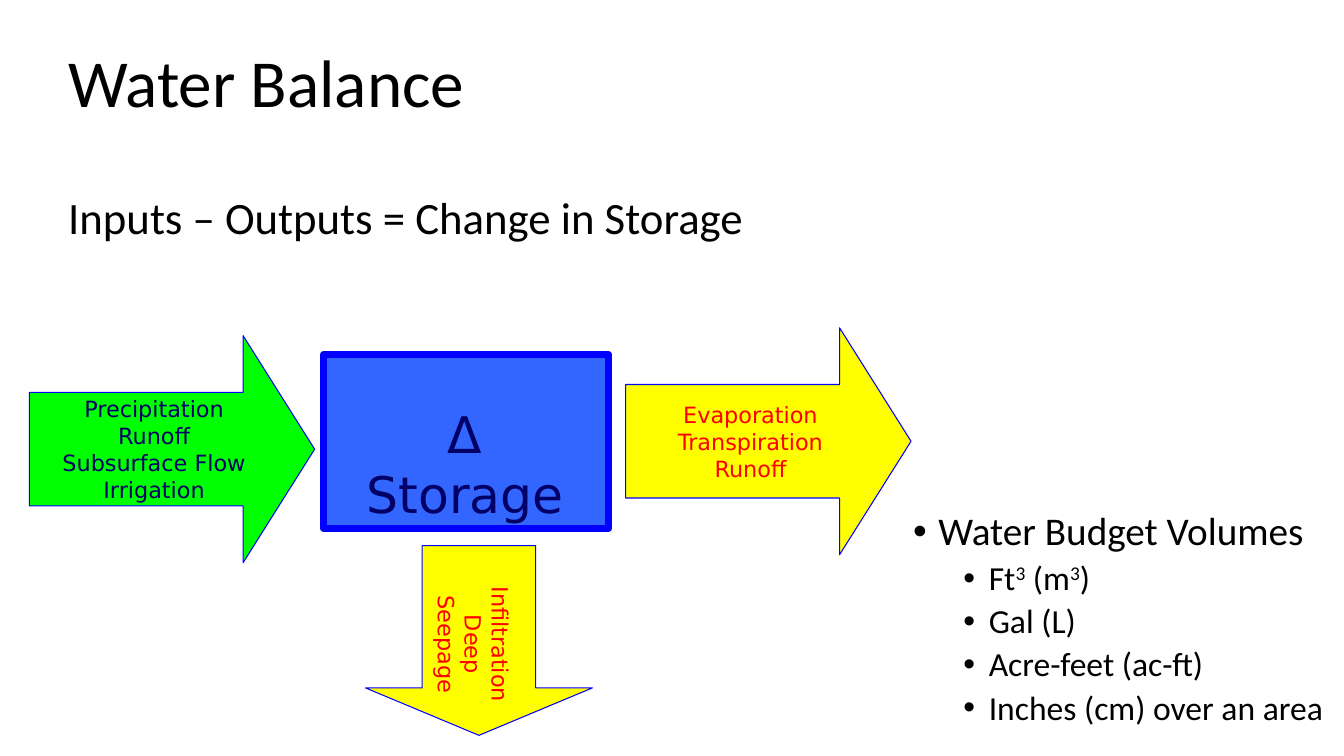
"""Builds the water balance slide."""
from pptx import Presentation
from pptx.dml.color import RGBColor
from pptx.enum.shapes import MSO_SHAPE as SHAPE
from pptx.enum.text import MSO_ANCHOR as ANCHOR, PP_ALIGN as ALIGN
from pptx.oxml.ns import qn
from pptx.util import Cm, Pt
from lxml.etree import SubElement

BLACK, NAVY, RED = "000000", "000066", "FF0000"
GREEN, YELLOW, POOL, BLUE = "00FF00", "FFFF00", "3366FF", "0000FF"
BODY, LABEL = "Calibri", "DejaVu Sans"

HEADINGS = [("Water Balance", 48, 0), ("Inputs – Outputs = Change in Storage", 32, 53)]
INPUTS = ["Precipitation", "Runoff", "Subsurface Flow", "Irrigation"]
OUTPUTS = ["Evaporation", "Transpiration", "Runoff"]
LOSSES = ["Infiltration", "Deep Seepage"]
VOLUMES = [
    (0, ["Water Budget Volumes"]),
    (1, ["Ft", "^3", " (m", "^3", ")"]),
    (1, ["Gal (L)"]),
    (1, ["Acre-feet (ac-ft)"]),
    (1, ["Inches (cm) over an area"]),
]
LEVELS = [(28, 10, 0.64), (24, 5, 1.91)]
HANGING = 0.64
ARROW_SIZE = (7.19, 5.72)


def rgb(color):
    """Turn a hex string into a colour."""
    return RGBColor.from_string(color)


def add_run(p, text, size, font, color):
    """Add one formatted run to a paragraph."""
    r = p.add_run()
    r.text = text
    r.font.size, r.font.name = Pt(size), font
    r.font.color.rgb = rgb(color)
    return r


def add_paragraph(tf, first):
    """Return the frame's first paragraph or a new one."""
    return tf.paragraphs[0] if first else tf.add_paragraph()


def add_box(slide, box, anchor):
    """Add a wrapping text box and return its frame."""
    tf = slide.shapes.add_textbox(*map(Cm, box)).text_frame
    tf.word_wrap, tf.vertical_anchor = True, anchor
    return tf


def add_block(slide, kind, box, fill, line_width=0.75, head=None):
    """Add a filled preset shape, outlined if it has a line width."""
    sp = slide.shapes.add_shape(kind, *map(Cm, box))
    sp.shadow.inherit = False
    sp.fill.solid()
    sp.fill.fore_color.rgb = rgb(fill)
    if line_width:
        sp.line.color.rgb = rgb(BLUE)
        sp.line.width = Pt(line_width)
    else:
        sp.line.fill.background()
    if head:
        sp.adjustments[0], sp.adjustments[1] = 0.5, head
    return sp


def write_label(tf, lines, size, color, anchor=ANCHOR.MIDDLE, wrap=False):
    """Write centred lines, one paragraph each."""
    tf.word_wrap, tf.vertical_anchor = wrap, anchor
    if wrap:
        tf.margin_left = tf.margin_right = Cm(0.64)
    for i, line in enumerate(lines):
        p = add_paragraph(tf, i == 0)
        p.alignment = ALIGN.CENTER
        add_run(p, line, size, LABEL, color)


def add_headings(slide):
    """Add the title and the balance equation."""
    tf = add_box(slide, (1.47, 2.11, 21.59, 3.18), ANCHOR.MIDDLE)
    for i, (text, size, gap) in enumerate(HEADINGS):
        p = add_paragraph(tf, i == 0)
        p.line_spacing, p.space_before = 0.9, Pt(gap)
        add_run(p, text, size, BODY, BLACK)


def add_diagram(slide):
    """Add the storage block with its inflow and outflow arrows."""
    arrow = SHAPE.RIGHT_ARROW
    down = add_block(slide, arrow, (9.68, 13.28, 4.78, 5.72), YELLOW, head=0.25)
    down.rotation = 90
    add_block(slide, SHAPE.RECTANGLE, (8.15, 8.94, 7.19, 4.37), POOL, 5)
    storage = add_block(slide, SHAPE.RECTANGLE, (8.36, 10.03, 6.73, 1.78), POOL, 0)
    write_label(storage.text_frame, ["Δ Storage"], 36, NAVY, ANCHOR.TOP, True)
    for corner, fill, lines, color in [
        ((0.74, 8.46), GREEN, INPUTS, NAVY),
        ((15.77, 8.26), YELLOW, OUTPUTS, RED),
    ]:
        sp = add_block(slide, arrow, corner + ARROW_SIZE, fill, head=0.315)
        write_label(sp.text_frame, lines, 16, color)
    losses = slide.shapes.add_textbox(*map(Cm, (9.96, 15.42, 4.6, 1.63)))
    losses.rotation = 90
    write_label(losses.text_frame, LOSSES, 16, RED, ANCHOR.TOP, True)


def add_volumes(slide):
    """Add the bulleted list of volume units."""
    tf = add_box(slide, (22.76, 12.78, 11.1, 5.74), ANCHOR.TOP)
    for i, (level, parts) in enumerate(VOLUMES):
        size, gap, indent = LEVELS[level]
        p = add_paragraph(tf, i == 0)
        p.level, p.line_spacing, p.space_before = level, 0.9, Pt(gap)
        pPr = p._p.get_or_add_pPr()
        pPr.set("marL", str(Cm(indent)))
        pPr.set("indent", str(-Cm(HANGING)))
        SubElement(pPr, qn("a:buFont")).set("typeface", "Arial")
        SubElement(pPr, qn("a:buChar")).set("char", "•")
        for part in parts:
            r = add_run(p, part.lstrip("^"), size, BODY, BLACK)
            if part.startswith("^"):
                r.font._element.set("baseline", "30000")


def main():
    """Build and save the slide."""
    prs = Presentation()
    prs.slide_width, prs.slide_height = Cm(33.87), Cm(19.05)
    slide = prs.slides.add_slide(prs.slide_layouts[6])
    add_headings(slide)
    add_diagram(slide)
    add_volumes(slide)
    prs.save("out.pptx")


if __name__ == "__main__":
    main()
